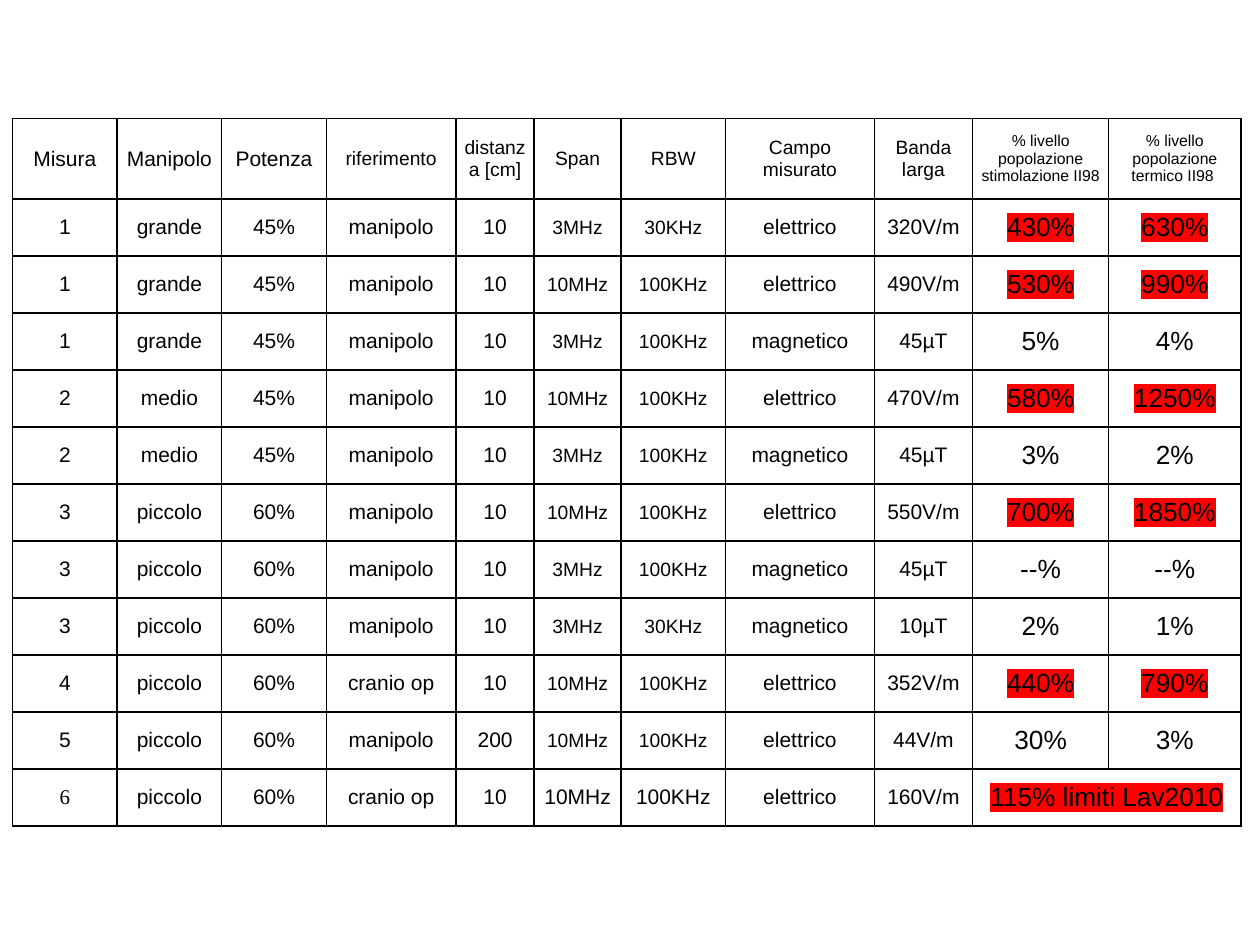
from pptx import Presentation
from pptx.util import Inches, Pt
from pptx.dml.color import RGBColor
from pptx.enum.text import PP_ALIGN as Align, MSO_ANCHOR as Anchor
from pptx.oxml import parse_xml
from pptx.oxml.ns import nsdecls

HEADS = ["Misura", "Manipolo", "Potenza", "riferimento", "distanza [cm]",
         "Span", "RBW", "Campo misurato", "Banda larga",
         "% livello popolazione stimolazione II98 ",
         "% livello popolazione termico II98 "]
ROWS = """\
1|grande|45%|manipolo|10|3MHz|30KHz|elettrico|320V/m|430%|630%
1|grande|45%|manipolo|10|10MHz|100KHz|elettrico|490V/m|530%|990%
1|grande|45%|manipolo|10|3MHz|100KHz|magnetico|45µT|5%|4%
2|medio|45%|manipolo|10|10MHz|100KHz|elettrico|470V/m|580%|1250%
2|medio|45%|manipolo|10|3MHz|100KHz|magnetico|45µT|3%|2%
3|piccolo|60%|manipolo|10|10MHz|100KHz|elettrico|550V/m|700%|1850%
3|piccolo|60%|manipolo|10|3MHz|100KHz|magnetico|45µT|--%|--%
3|piccolo|60%|manipolo|10|3MHz|30KHz|magnetico|10µT|2%|1%
4|piccolo|60%|cranio op|10|10MHz|100KHz|elettrico|352V/m|440%|790%
5|piccolo|60%|manipolo|200|10MHz|100KHz|elettrico|44V/m|30%|3%
6|piccolo|60%|cranio op|10|10MHz|100KHz|elettrico|160V/m|115% limiti Lav2010"""
WIDTHS = [0.83, 0.83, 0.83, 1.03, 0.62, 0.69, 0.83, 1.18, 0.78, 1.08, 1.05]
HEAD_SIZES = [12] * 3 + [11] * 6 + [9] * 2
BODY_SIZES = [12] * 5 + [11] * 2 + [12] * 2 + [15] * 2
LAST_SIZES = [12] * 9 + [15]
LEFT, TOP, HIGH, HEAD_HIGH = 0.1, 0.94, 5.62, 0.64


def color(code):
    return RGBColor.from_string(code)


def over(text):
    """True for a level above 100 % of the limit."""
    level = text.split("%")[0]
    return level.isdigit() and int(level) > 100


class Page:
    font, ink, paper, alarm = "Arial", "000000", "FFFFFF", "FF0000"

    def __init__(self, slide):
        self.slide = slide

    def table(self, widths, heights):
        frame = self.slide.shapes.add_table(
            len(heights), len(widths), Inches(LEFT), Inches(TOP),
            Inches(sum(widths)), Inches(sum(heights)))
        grid = frame.table
        grid.first_row = grid.horz_banding = False
        for col, width in zip(grid.columns, widths):
            col.width = Inches(width)
        for row, height in zip(grid.rows, heights):
            row.height = Inches(height)
        for cell in grid.iter_cells():
            self.border(cell)
        return grid

    def border(self, cell):
        props = cell._tc.get_or_add_tcPr()
        for side in "LRTB":
            props.append(parse_xml(
                f'<a:ln{side} {nsdecls("a")} w="{Pt(1)}"><a:solidFill>'
                f'<a:srgbClr val="{self.ink}"/></a:solidFill></a:ln{side}>'))
        cell.fill.solid()
        cell.fill.fore_color.rgb = color(self.paper)
        cell.vertical_anchor = Anchor.MIDDLE
        cell.margin_left = cell.margin_right = Inches(0.06)
        cell.margin_top = cell.margin_bottom = 0

    def label(self, cell, text, size, font=None, mark=False):
        cell.text = text
        para = cell.text_frame.paragraphs[0]
        para.alignment = Align.CENTER
        para.font.name = font or self.font
        para.font.size = Pt(size)
        para.font.color.rgb = color(self.ink)
        if mark:
            props = para.runs[0]._r.get_or_add_rPr()
            props.append(parse_xml(
                f'<a:highlight {nsdecls("a")}>'
                f'<a:srgbClr val="{self.alarm}"/></a:highlight>'))


def main():
    deck = Presentation()
    deck.slide_width, deck.slide_height = Inches(10), Inches(7.5)
    page = Page(deck.slides.add_slide(deck.slide_layouts[6]))

    # Grid: a taller header, then equal rows
    rows = [line.split("|") for line in ROWS.splitlines()]
    count = len(rows)
    grid = page.table(WIDTHS, [HEAD_HIGH] + [(HIGH - HEAD_HIGH) / count] * count)
    grid.cell(count, 9).merge(grid.cell(count, 10))

    # Header
    for col, (text, size) in enumerate(zip(HEADS, HEAD_SIZES)):
        page.label(grid.cell(0, col), text, size)

    # Measurements, with levels over the limit marked
    for row, texts in enumerate(rows, 1):
        sizes = LAST_SIZES if row == count else BODY_SIZES
        for col, (text, size) in enumerate(zip(texts, sizes)):
            font = "Times New Roman" if (row, col) == (count, 0) else None
            page.label(grid.cell(row, col), text, size, font,
                       col >= 9 and over(text))

    deck.save("out.pptx")


if __name__ == "__main__":
    main()
